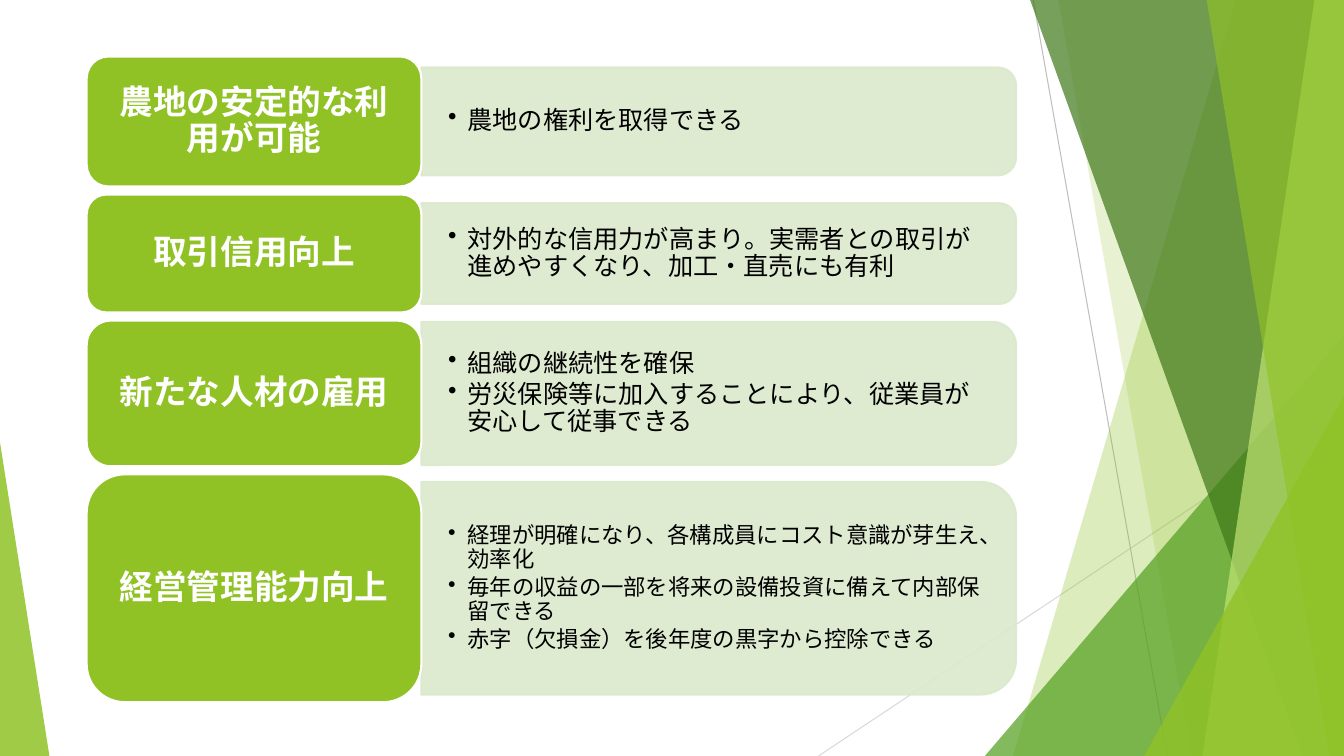
from dataclasses import dataclass

from lxml import etree
from pptx import Presentation
from pptx import util as u
from pptx.dml.color import RGBColor
from pptx.enum import shapes, text
from pptx.oxml import ns

WIDTH, HEIGHT = u.Inches(13.33), u.Inches(7.5)
FONT = "Roboto"

LIME = RGBColor(0x90, 0xC2, 0x26)
LEAF = RGBColor(0x54, 0xA0, 0x21)
FOREST = RGBColor(0x3F, 0x78, 0x19)
PALE_LIME = RGBColor(0xC0, 0xE4, 0x74)
MIST = RGBColor(0xDB, 0xE9, 0xCD)
WHITE = RGBColor(0xFF, 0xFF, 0xFF)
BLACK = RGBColor(0x00, 0x00, 0x00)
LIGHT_GREY = RGBColor(0xD9, 0xD9, 0xD9)
GREY = RGBColor(0xBF, 0xBF, 0xBF)

# All positions and lengths below are percentages of the slide's width or height.
Point = tuple[float, float]
LABEL_LEFT, LABEL_WIDTH = 6.45, 24.9
PANEL_LEFT, PANEL_WIDTH = 31.35, 44.25
PANEL_TEXT_WIDTH = 43.7
FIRST_TOP, ROW_GAP = 7.47, 1.07


@dataclass(frozen=True)
class Ray:
    start: Point
    end: Point
    color: RGBColor


@dataclass(frozen=True)
class Facet:
    points: tuple[Point, ...]
    color: RGBColor
    opacity: int


@dataclass(frozen=True)
class Benefit:
    label: str
    details: tuple[str, ...]
    label_height: float
    panel_height: float
    size: int = 18


RAYS = (
    Ray((60.9, 100), (100, 53.73), LIGHT_GREY),
    Ray((76.88, 0), (86.85, 100), GREY),
)


def right_band(top: float, bottom: float) -> tuple[Point, ...]:
    """Outline from a slanted left edge to the slide's right edge."""
    return (top, 0), (bottom, 100), (100, 100), (100, 0)


def right_corner(left: float, top: float) -> tuple[Point, ...]:
    """Triangle in the slide's lower right corner."""
    return (left, 100), (100, top), (100, 100)


FACETS = (
    Facet(right_band(91.95, 75.38), LIME, 30),
    Facet(right_band(78.75, 88.65), LIME, 20),
    Facet(right_corner(73.28, 44.4), LEAF, 72),
    Facet(right_band(76.65, 96.9), FOREST, 70),
    Facet(right_band(97.8, 89.48), PALE_LIME, 70),
    Facet(right_band(89.78, 98.93), LIME, 65),
    Facet(right_corner(85.13, 52.4), LIME, 80),
    Facet(((0, 58.5), (3.68, 100), (0, 100)), LIME, 85),
)

BENEFITS = (
    Benefit("農地の安定的な利用が可能", ("農地の権利を取得できる",), 17.2, 14.27),
    Benefit("取引信用向上",
            ("対外的な信用力が高まり。実需者との取引が進めやすくなり、加工・直売にも有利",),
            15.6, 13.33),
    Benefit("新たな人材の雇用",
            ("組織の継続性を確保",
             "労災保険等に加入することにより、従業員が安心して従事できる"),
            19.27, 18.93),
    Benefit("経営管理能力向上",
            ("経理が明確になり、各構成員にコスト意識が芽生え、効率化",
             "毎年の収益の一部を将来の設備投資に備えて内部保留できる",
             "赤字（欠損金）を後年度の黒字から控除できる"),
            30.13, 28.13, 16),
)


def across(share: float) -> int:
    return round(WIDTH * share / 100)


def down(share: float) -> int:
    return round(HEIGHT * share / 100)


def set_opacity(sp, percent: int) -> None:
    for color in sp.element.iter(ns.qn("a:srgbClr")):
        etree.SubElement(color, ns.qn("a:alpha"), val=str(percent * 1000))


def paint(sp, fill: RGBColor, line: RGBColor | None = None) -> None:
    sp.shadow.inherit = False
    sp.fill.solid()
    sp.fill.fore_color.rgb = fill
    if line is None:
        sp.line.fill.background()
    else:
        sp.line.color.rgb = line
        sp.line.width = u.Pt(1.5)


def style_paragraph(p, size: int, color: RGBColor, bold: bool = False) -> None:
    p.line_spacing = 0.9
    p.font.name = FONT
    p.font.size = u.Pt(size)
    p.font.bold = bold
    p.font.color.rgb = color


def add_ray(slide, ray: Ray) -> None:
    (x1, y1), (x2, y2) = ray.start, ray.end
    line = slide.shapes.add_connector(
        shapes.MSO_CONNECTOR.STRAIGHT, across(x1), down(y1), across(x2), down(y2))
    line.line.color.rgb = ray.color
    line.line.width = u.Pt(0.75)
    etree.SubElement(line.element.spPr, ns.qn("a:effectLst"))


def add_facet(slide, facet: Facet) -> None:
    start, *rest = [(across(x), down(y)) for x, y in facet.points]
    builder = slide.shapes.build_freeform(*start)
    builder.add_line_segments(rest, close=True)
    sp = builder.convert_to_shape()
    paint(sp, facet.color)
    set_opacity(sp, facet.opacity)


def add_panel(slide, benefit: Benefit, middle: float) -> None:
    """Draw the tinted panel, turned so that its round corners face right."""
    w, h = down(benefit.panel_height), across(PANEL_WIDTH)
    left = across(PANEL_LEFT + PANEL_WIDTH / 2) - w // 2
    sp = slide.shapes.add_shape(
        shapes.MSO_SHAPE.ROUND_2_SAME_RECTANGLE, left, down(middle) - h // 2, w, h)
    sp.rotation = 90
    paint(sp, MIST, MIST)
    set_opacity(sp, 90)


def add_details(slide, benefit: Benefit, middle: float) -> None:
    box = slide.shapes.add_textbox(
        across(PANEL_LEFT), down(middle - benefit.panel_height / 2),
        across(PANEL_TEXT_WIDTH), down(benefit.panel_height))
    tf = box.text_frame
    tf.word_wrap = True
    tf.vertical_anchor = text.MSO_ANCHOR.MIDDLE
    tf.margin_left = tf.margin_right = across(2)
    tf.margin_top = tf.margin_bottom = down(1.8)
    tf.text = "\n".join(benefit.details)
    indent = across(1.43)
    for p in tf.paragraphs:
        p.level = 1
        p.space_after = u.Pt(benefit.size * 0.15)
        style_paragraph(p, benefit.size, BLACK)
        pPr = p.font._element.getparent()
        pPr.set("marL", str(indent))
        pPr.set("indent", str(-indent))
        bullet = etree.Element(ns.qn("a:buChar"), char="•")
        pPr.find(ns.qn("a:defRPr")).addprevious(bullet)


def add_label(slide, benefit: Benefit, top: float) -> None:
    sp = slide.shapes.add_shape(
        shapes.MSO_SHAPE.ROUNDED_RECTANGLE, across(LABEL_LEFT), down(top),
        across(LABEL_WIDTH), down(benefit.label_height))
    paint(sp, LIME, WHITE)
    tf = sp.text_frame
    tf.word_wrap = True
    tf.vertical_anchor = text.MSO_ANCHOR.MIDDLE
    tf.margin_left = tf.margin_right = across(0.8)
    tf.text = benefit.label
    p = tf.paragraphs[0]
    p.alignment = text.PP_ALIGN.CENTER
    style_paragraph(p, 24, WHITE, bold=True)


def main() -> None:
    prs = Presentation()
    prs.slide_width, prs.slide_height = WIDTH, HEIGHT
    slide = prs.slides.add_slide(prs.slide_layouts[6])
    for ray in RAYS:
        add_ray(slide, ray)
    for facet in FACETS:
        add_facet(slide, facet)
    top = FIRST_TOP
    for benefit in BENEFITS:
        middle = top + benefit.label_height / 2
        add_panel(slide, benefit, middle)
        add_details(slide, benefit, middle)
        add_label(slide, benefit, top)
        top += benefit.label_height + ROW_GAP
    prs.save("out.pptx")


if __name__ == "__main__":
    main()
